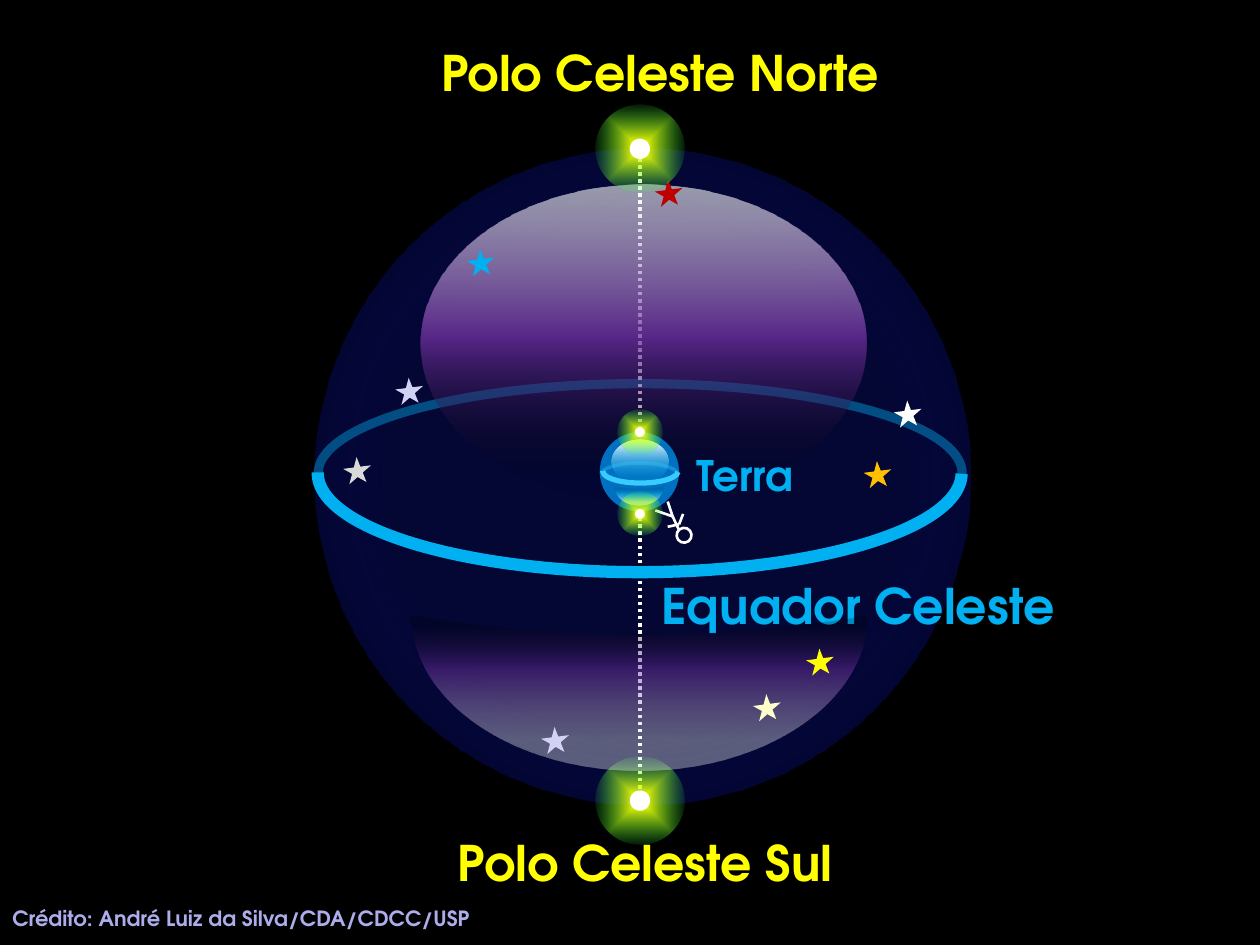
from lxml.etree import SubElement
from pptx import Presentation
from pptx.dml.color import RGBColor
from pptx.enum.dml import MSO_LINE
from pptx.enum.shapes import MSO_CONNECTOR, MSO_SHAPE as Preset
from pptx.enum.text import MSO_AUTO_SIZE, PP_ALIGN as Align
from pptx.oxml.ns import qn
from pptx.util import Cm, Pt

FONT = "TeX Gyre Adventor"
BLACK = RGBColor(0x00, 0x00, 0x00)
WHITE = RGBColor(0xFF, 0xFF, 0xFF)
YELLOW = RGBColor(0xFF, 0xFF, 0x00)
SKY = RGBColor(0x00, 0xB0, 0xF0)
BRIGHT_SKY = RGBColor(0x37, 0xCB, 0xFF)
PALE_SKY = RGBColor(0xC2, 0xFF, 0xF0)
OCEAN = RGBColor(0x00, 0x70, 0xC0)
NAVY = RGBColor(0x0A, 0x12, 0x8C)
VIOLET = RGBColor(0x87, 0x3A, 0xC0)
PURPLE = RGBColor(0x70, 0x30, 0xA0)
GREEN = RGBColor(0x21, 0xFF, 0x46)
LAVENDER = RGBColor(0xD2, 0xD2, 0xF4)
LILAC = RGBColor(0xAD, 0xAD, 0xEB)
RED = RGBColor(0xC0, 0x00, 0x00)
GREY = RGBColor(0xD9, 0xD9, 0xD9)
ORANGE = RGBColor(0xFF, 0xC0, 0x00)
CREAM = RGBColor(0xFF, 0xFF, 0xCC)

AXIS_X = 12.9
SPHERE_STOPS = [(40, NAVY, 37), (64, BLACK, 100), (71, VIOLET, 65)]
NORTH_SHINE = [(2, WHITE, 58), (48, PURPLE, 77), (91, BLACK, 2)]
SOUTH_SHINE = [(19, WHITE, 35), (66, PURPLE, 47), (94, BLACK, 22)]
EARTH_NORTH_SHINE = [(3, WHITE, 100), (85, SKY, 12), (100, PALE_SKY, 0)]
EARTH_SOUTH_SHINE = [(19, WHITE, 70), (66, SKY, 44), (100, BLACK, 0)]
GLOW_STOPS = [(7, YELLOW, 100), (77, GREEN, 2)]
STARS = [
    (18.03, 8.13, WHITE), (7.98, 7.67, LAVENDER), (13.21, 3.68, RED),
    (9.42, 5.08, SKY), (6.93, 9.27, GREY), (10.92, 14.71, LAVENDER),
    (17.42, 9.35, ORANGE), (16.26, 13.13, YELLOW), (15.19, 14.05, CREAM),
]
NECK, HIP, CHEST = (13.69, 10.69), (13.56, 10.41), (13.69, 10.57)
LIMBS = [
    (NECK, HIP), (HIP, (13.21, 10.29)), (HIP, (13.46, 10.11)),
    (CHEST, (13.46, 10.62)), ((13.77, 10.36), CHEST),
]


def add_preset(shapes, preset, box, rotation=0, color=None):
    """Add a borderless preset shape, filled when a colour is given."""
    shape = shapes.add_shape(preset, *(Cm(value) for value in box))
    shape.shadow.inherit = False
    shape.rotation = rotation
    shape.line.fill.background()
    if color is None:
        shape.fill.background()
    else:
        shape.fill.solid()
        shape.fill.fore_color.rgb = color
    return shape


def set_gradient(shape, stops, angle=0, path=None):
    """Fill a shape with a linear or centred gradient of translucent stops."""
    properties = shape._element.spPr
    gradient = properties.makeelement(qn("a:gradFill"), {"rotWithShape": "1"})
    stop_list = SubElement(gradient, qn("a:gsLst"))
    for position, color, opacity in stops:
        stop = SubElement(stop_list, qn("a:gs"), pos=str(position * 1000))
        value = SubElement(stop, qn("a:srgbClr"), val=str(color))
        SubElement(value, qn("a:alpha"), val=str(opacity * 1000))
    if path:
        center = SubElement(gradient, qn("a:path"), path=path)
        SubElement(center, qn("a:fillToRect"), l="50000", t="50000", r="50000", b="50000")
    else:
        SubElement(gradient, qn("a:lin"), ang=str(angle * 60000), scaled="0")
    properties.replace(properties.find(qn("a:noFill")), gradient)


def add_arc(shapes, box, ends, color, width, opacity=100):
    """Add half of an equator ring."""
    arc = add_preset(shapes, Preset.ARC, box, 90)
    arc.adjustments[0], arc.adjustments[1] = ends
    arc.line.color.rgb = color
    arc.line.width = Pt(width)
    if opacity < 100:
        value = next(arc.line._ln.iter(qn("a:srgbClr")))
        SubElement(value, qn("a:alpha"), val=str(opacity * 1000))


def add_moon(shapes, box, stops):
    """Add the curved shine at the bottom of a globe."""
    moon = add_preset(shapes, Preset.MOON, box, 270)
    moon.adjustments[0] = 0.875
    set_gradient(moon, stops)


def add_line(shapes, start, end, width, dash=None):
    """Add a straight white line."""
    line = shapes.add_connector(
        MSO_CONNECTOR.STRAIGHT, *(Cm(value) for value in start + end))
    line.line.color.rgb = WHITE
    line.line.width = Pt(width)
    if dash:
        line.line.dash_style = dash
    SubElement(line._element.spPr, qn("a:effectLst"))


def add_pole(slide, y, size, dot_size, rotation=305.7):
    """Add a glowing pole centred on the axis."""
    shapes = slide.shapes.add_group_shape().shapes
    boxes = [(AXIS_X - side / 2, y - side / 2, side, side) for side in (size, dot_size)]
    glow = add_preset(shapes, Preset.OVAL, boxes[0], rotation)
    set_gradient(glow, GLOW_STOPS, path="shape")
    add_preset(shapes, Preset.OVAL, boxes[1], rotation, WHITE)


def add_label(slide, text, box, size, color, alignment=Align.CENTER):
    """Add a one-line bold label."""
    label = slide.shapes.add_textbox(*(Cm(value) for value in box))
    text_frame = label.text_frame
    text_frame.word_wrap = True
    text_frame.auto_size = MSO_AUTO_SIZE.SHAPE_TO_FIT_TEXT
    text_frame.text = text
    paragraph = text_frame.paragraphs[0]
    paragraph.alignment = alignment
    font = paragraph.runs[0].font
    font.name, font.size, font.bold = FONT, Pt(size), True
    font.color.rgb = color


def add_earth(slide):
    """Add the Earth globe with its two shines."""
    shapes = slide.shapes.add_group_shape().shapes
    add_preset(shapes, Preset.OVAL, (12.09, 8.71, 1.6, 1.6), 305.7, OCEAN)
    shine = add_preset(shapes, Preset.OVAL, (12.34, 8.86, 1.14, 0.89))
    set_gradient(shine, EARTH_NORTH_SHINE, angle=90)
    add_moon(shapes, (12.7, 9.5, 0.38, 0.99), EARTH_SOUTH_SHINE)


def add_observer(slide):
    """Add the stick figure standing on the Earth."""
    shapes = slide.shapes.add_group_shape().shapes
    head = add_preset(shapes, Preset.OVAL, (13.64, 10.64, 0.3, 0.3), 143.2)
    head.line.color.rgb = WHITE
    head.line.width = Pt(1.5)
    for start, end in LIMBS:
        add_line(shapes, start, end, 1.5)


def add_stars(slide):
    """Add the scattered stars."""
    shapes = slide.shapes.add_group_shape().shapes
    for left, top, color in STARS:
        add_preset(shapes, Preset.STAR_5_POINT, (left, top, 0.58, 0.51), 138.8, color)


def main():
    """Build the celestial sphere slide."""
    presentation = Presentation()
    presentation.slide_width, presentation.slide_height = Cm(25.4), Cm(19.05)
    slide = presentation.slides.add_slide(presentation.slide_layouts[6])
    slide.background.fill.solid()
    slide.background.fill.fore_color.rgb = BLACK
    shapes = slide.shapes

    sphere = add_preset(shapes, Preset.OVAL, (6.35, 3, 13.21, 13.21), 305.7)
    set_gradient(sphere, SPHERE_STOPS, path="circle")
    add_arc(shapes, (11.1, 3.05, 3.61, 12.98), (53.01, 162.19), SKY, 5.25, 42)
    add_line(shapes, (AXIS_X, 16.18), (AXIS_X, 3.18), 2, MSO_LINE.ROUND_DOT)
    shine = add_preset(shapes, Preset.OVAL, (8.48, 3.73, 8.99, 6.4))
    set_gradient(shine, NORTH_SHINE, angle=90)
    add_pole(slide, 16.14, 1.78, 0.41, 125.7)
    add_label(slide, "Equador Celeste", (12.5, 11.48, 9.6, 1.45), 28, SKY)
    add_moon(shapes, (11.33, 9.37, 3.12, 9.19), SOUTH_SHINE)

    add_earth(slide)
    add_label(slide, "Terra", (11.51, 8.94, 7.01, 1.27), 24, SKY)
    add_arc(shapes, (10.9, 3.05, 3.99, 12.98), (162.06, 54.09), SKY, 7)
    add_observer(slide)
    add_stars(slide)
    add_arc(shapes, (12.67, 8.74, 0.48, 1.52), (162.66, 54.09), BRIGHT_SKY, 3)
    add_arc(shapes, (12.65, 8.79, 0.48, 1.57), (55.39, 160.98), BRIGHT_SKY, 2, 35)

    add_label(slide, "Polo Celeste Norte", (8.51, 0.74, 9.6, 1.45), 28, YELLOW)
    add_label(slide, "Polo Celeste Sul", (7.52, 16.66, 10.97, 1.45), 28, YELLOW)
    add_label(slide, "Crédito: André Luiz da Silva/CDA/CDCC/USP",
              (0, 18.14, 26.11, 0.76), 12, LILAC, Align.LEFT)
    add_pole(slide, 3, 1.78, 0.41)
    for y in (8.71, 10.36):
        add_pole(slide, y, 0.89, 0.2)
    presentation.save("out.pptx")


if __name__ == "__main__":
    main()
